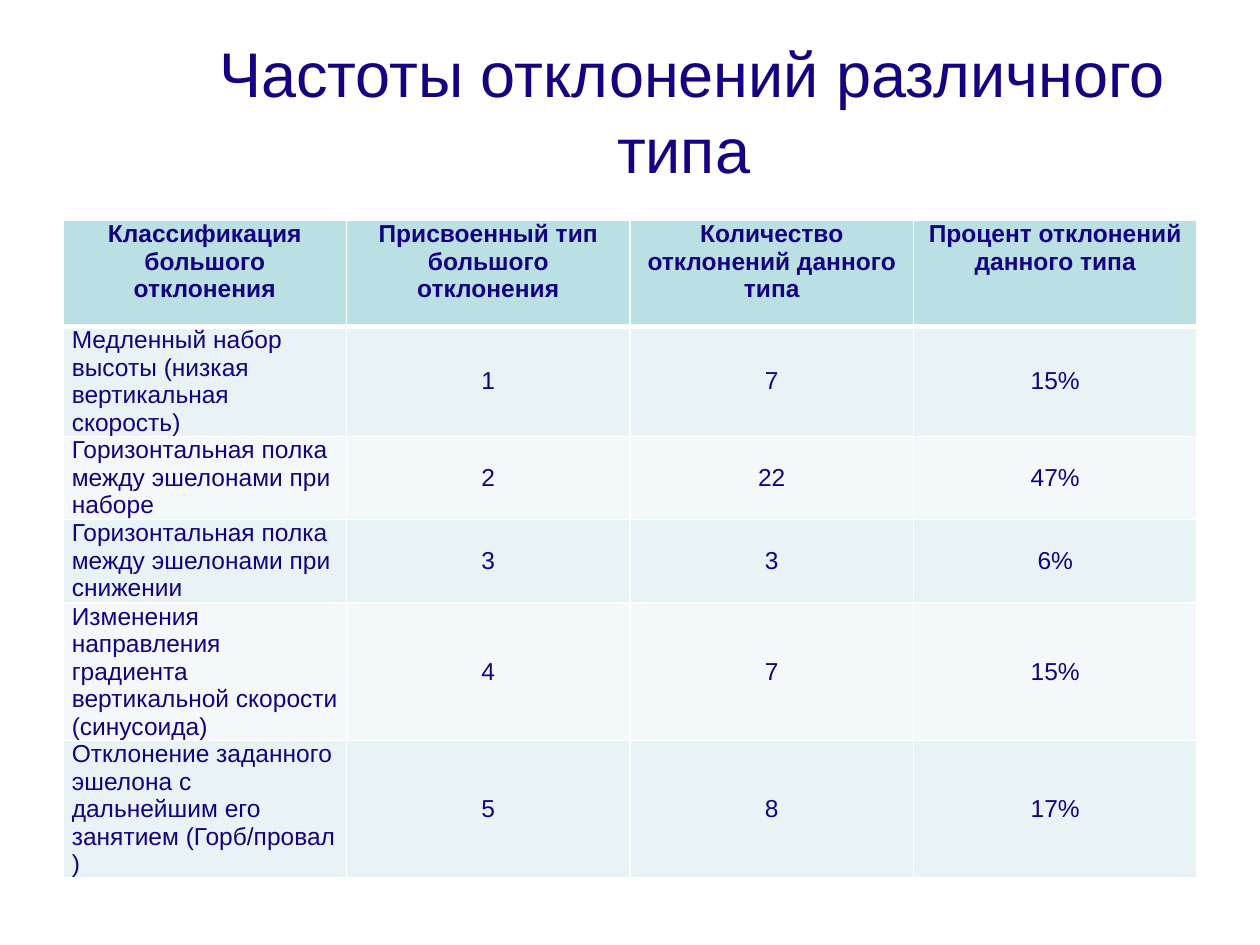
import pptx
import pptx.util
import pptx.dml.color
import pptx.enum.text
import pptx.oxml
import pptx.oxml.ns
from typing import NamedTuple

Inches = pptx.util.Inches
Pt = pptx.util.Pt
RGB = pptx.dml.color.RGBColor
Align = pptx.enum.text.PP_ALIGN
Anchor = pptx.enum.text.MSO_ANCHOR

NAVY = RGB(0x14, 0x02, 0x80)
TEAL = RGB(0xBB, 0xE0, 0xE3)
BANDS = (RGB(0xE7, 0xF3, 0xF4), RGB(0xF3, 0xF9, 0xFA))
WHITE = RGB(0xFF, 0xFF, 0xFF)

FONT = {"name": "Arial", "size": Pt(14), "bold": False}
INSETS = {"margin_left": Inches(0.07), "margin_right": Inches(0.07),
          "margin_top": 0, "margin_bottom": 0}


class Row(NamedTuple):
    kind: str
    code: str
    count: str
    share: str
    height: float


HEAD = Row("Классификация большого отклонения",
           "Присвоенный тип большого отклонения",
           "Количество отклонений данного типа",
           "Процент отклонений данного типа", 0.84)
ROWS = [
    Row("Медленный набор высоты (низкая вертикальная скорость)",
        "1", "7", "15%", 0.87),
    Row("Горизонтальная полка между эшелонами при наборе",
        "2", "22", "47%", 0.66),
    Row("Горизонтальная полка между эшелонами при снижении",
        "3", "3", "6%", 0.66),
    Row("Изменения направления градиента вертикальной скорости (синусоида)",
        "4", "7", "15%", 1.09),
    Row("Отклонение заданного эшелона с дальнейшим его занятием (Горб/провал )",
        "5", "8", "17%", 1.09),
]


def style(font, **extra) -> None:
    for key, value in {**FONT, **extra}.items():
        setattr(font, key, value)
    font.color.rgb = NAVY


def border(cell, side: str, width: float) -> None:
    line = pptx.oxml.parse_xml(
        f'<a:{side} {pptx.oxml.ns.nsdecls("a")} w="{Pt(width)}">'
        f'<a:solidFill><a:srgbClr val="{WHITE}"/></a:solidFill></a:{side}>')
    cell._tc.get_or_add_tcPr().append(line)


def fill_cell(cell, text: str, fill: RGB, align, anchor,
              bold: bool, top: float, bottom: float) -> None:
    for key, value in INSETS.items():
        setattr(cell, key, value)
    cell.vertical_anchor = anchor
    para = cell.text_frame.paragraphs[0]
    para.alignment = align
    run = para.add_run()
    run.text = text
    style(run.font, bold=bold)
    # Borders come before the fill in the cell properties
    for side, width in (("lnL", 1), ("lnR", 1), ("lnT", top), ("lnB", bottom)):
        border(cell, side, width)
    cell.fill.solid()
    cell.fill.fore_color.rgb = fill


def add_grid(slide) -> None:
    rows = [HEAD, *ROWS]
    total = sum(row.height for row in rows)
    table = slide.shapes.add_table(len(rows), 4, Inches(0.5), Inches(1.75),
                                   Inches(9), Inches(total)).table
    for r, row in enumerate(rows):
        table.rows[r].height = Inches(row.height)
        head = r == 0
        fill = TEAL if head else BANDS[(r - 1) % 2]
        for c, text in enumerate(row[:4]):
            align = Align.LEFT if c == 0 and not head else Align.CENTER
            anchor = Anchor.TOP if c == 0 or head else Anchor.MIDDLE
            fill_cell(table.cell(r, c), text, fill, align, anchor, head,
                      3 if r == 1 else 1, 3 if head else 1)


def add_title(slide, text: str) -> None:
    title = slide.shapes.title
    place = {"left": 1.58, "top": 0.25, "width": 7.83, "height": 1.25}
    for key, value in place.items():
        setattr(title, key, Inches(value))
    frame = title.text_frame
    frame.word_wrap = True
    frame.vertical_anchor = Anchor.MIDDLE
    para = frame.paragraphs[0]
    para.alignment = Align.CENTER
    run = para.add_run()
    run.text = text
    style(run.font, size=Pt(36))


def main() -> None:
    deck = pptx.Presentation()
    deck.slide_width, deck.slide_height = Inches(10), Inches(7.5)
    slide = deck.slides.add_slide(deck.slide_layouts[5])
    add_title(slide, "Частоты отклонений различного типа ")
    add_grid(slide)
    deck.save("out.pptx")


if __name__ == "__main__":
    main()
